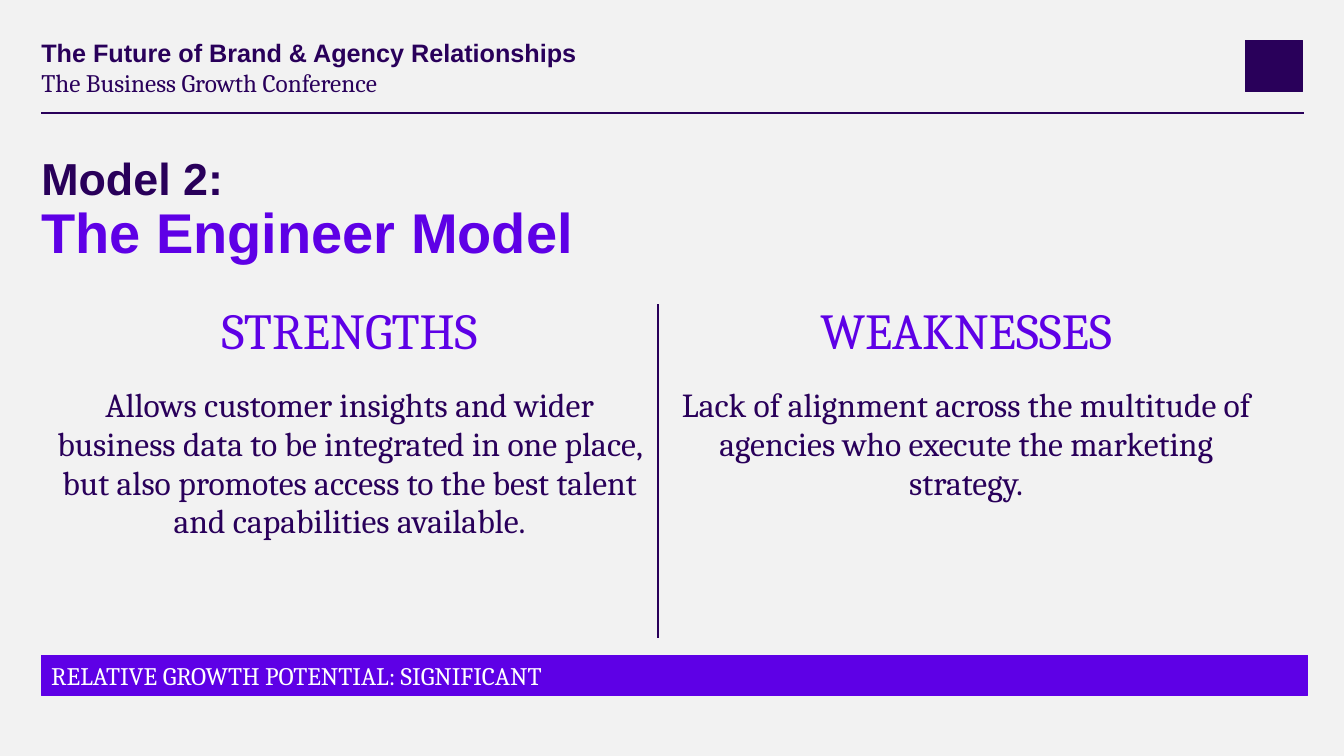
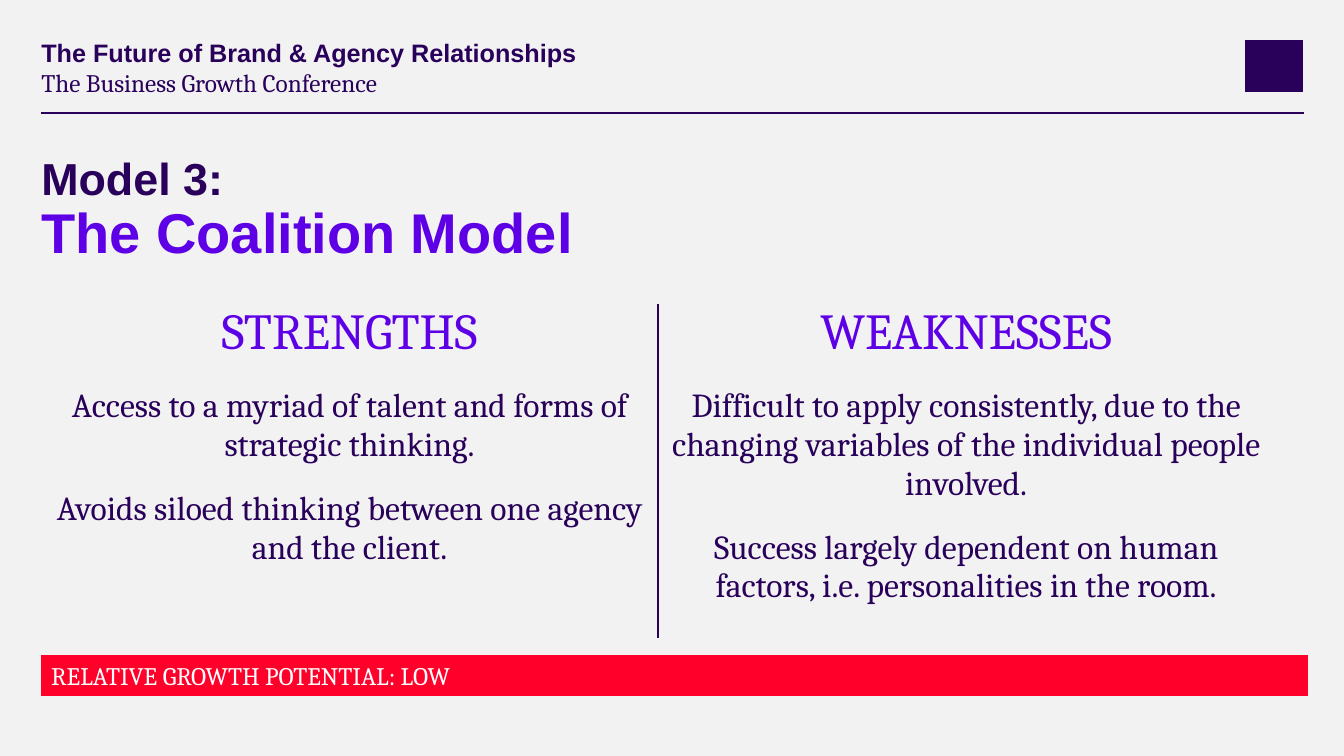
from dataclasses import dataclass

from lxml.etree import SubElement
from pptx import Presentation
from pptx.dml.color import RGBColor
from pptx.enum.shapes import MSO_CONNECTOR, MSO_SHAPE
from pptx.enum.text import MSO_ANCHOR, MSO_AUTO_SIZE, PP_ALIGN
from pptx.oxml.ns import qn
from pptx.util import Inches, Pt

BACKGROUND = "F2F2F2"
INK = "29005A"
VIOLET = "5E00E6"
RED = "FF002A"
WHITE = "FFFFFF"
SANS = "Arial"
SERIF = "Cambria"
LEFT = 0.41
RIGHT = 12.93
NO_TABLE_STYLE = "{2D5ABB26-0587-4C30-8999-92F81FD0307C}"


@dataclass
class Model:
    number: int
    name: str
    strengths: list[str]
    weaknesses: list[str]
    potential: str
    potential_color: str


MODELS = [
    Model(
        2,
        "The Engineer Model",
        ["Allows customer insights and wider business data to be integrated in one place, "
         "but also promotes access to the best talent and capabilities available."],
        ["Lack of alignment across the multitude of agencies who execute the marketing strategy."],
        "SIGNIFICANT",
        VIOLET,
    ),
    Model(
        3,
        "The Coalition Model",
        ["Access to a myriad of talent and forms of strategic thinking.",
         "Avoids siloed thinking between one agency and the client."],
        ["Difficult to apply consistently, due to the changing variables of the individual "
         "people involved.",
         "Success largely dependent on human factors, i.e. personalities in the room."],
        "LOW",
        RED,
    ),
]


def rgb(color: str) -> RGBColor:
    return RGBColor.from_string(color)


def add_text(paragraph, text: str, *, size: float, color: str = INK, font: str = SERIF,
             bold: bool = False, align=PP_ALIGN.LEFT, line_spacing: float = 1.0,
             space_after: float = 0) -> None:
    """Append a run and set the format of its paragraph."""
    paragraph.alignment = align
    paragraph.line_spacing = line_spacing
    paragraph.space_before = Pt(0)
    paragraph.space_after = Pt(space_after)
    run = paragraph.add_run()
    run.text = text
    run.font.size = Pt(size)
    run.font.name = font
    run.font.bold = bold
    run.font.color.rgb = rgb(color)


def prepare_placeholder(placeholder, top: float, width: float, height: float):
    """Place a placeholder, clear its insets and return its first paragraph."""
    placeholder.left, placeholder.top = Inches(LEFT), Inches(top)
    placeholder.width, placeholder.height = Inches(width), Inches(height)
    frame = placeholder.text_frame
    frame.margin_left = frame.margin_right = frame.margin_top = frame.margin_bottom = 0
    frame.auto_size = MSO_AUTO_SIZE.NONE
    frame.word_wrap = True
    frame.vertical_anchor = MSO_ANCHOR.MIDDLE
    return frame.paragraphs[0]


def remove_bullet(paragraph) -> None:
    properties = paragraph._p.get_or_add_pPr()
    properties.set("marL", "0")
    properties.set("indent", "0")
    SubElement(properties, qn("a:buNone"))


def add_rectangle(slide, left: float, top: float, width: float, height: float, color: str):
    shape = slide.shapes.add_shape(
        MSO_SHAPE.RECTANGLE, Inches(left), Inches(top), Inches(width), Inches(height))
    shape.shadow.inherit = False
    shape.fill.solid()
    shape.fill.fore_color.rgb = rgb(color)
    shape.line.color.rgb = rgb(color)
    shape.line.width = Pt(0.75)
    return shape


def add_header(slide) -> None:
    rule = slide.shapes.add_connector(
        MSO_CONNECTOR.STRAIGHT, Inches(LEFT), Inches(1.12), Inches(RIGHT), Inches(1.12))
    rule.line.color.rgb = rgb(INK)
    rule.line.width = Pt(1.5)
    SubElement(rule._element.spPr, qn("a:effectLst"))
    add_rectangle(slide, 12.35, 0.4, 0.57, 0.51, INK)

    lines = [
        ("The Future of Brand & Agency Relationships", SANS, True),
        ("The Business Growth Conference", SERIF, False),
    ]
    for index, (text, font, bold) in enumerate(lines):
        placeholder = slide.placeholders[index + 1]
        paragraph = prepare_placeholder(placeholder, 0.4 + 0.3 * index, 8.27, 0.27)
        add_text(paragraph, text, size=18, font=font, bold=bold, line_spacing=0.9)
        remove_bullet(paragraph)


def add_title(slide, model: Model) -> None:
    paragraph = prepare_placeholder(slide.shapes.title, 1.55, RIGHT - LEFT, 1.09)
    title_format = dict(font=SANS, bold=True, line_spacing=0.9)
    add_text(paragraph, f"Model {model.number}:", size=32, **title_format)
    paragraph.add_line_break()
    add_text(paragraph, model.name, size=40, color=VIOLET, **title_format)


def add_cell_border(cell, side: str) -> None:
    """Draw one side of a cell; side is lnL, lnR, lnT or lnB."""
    properties = cell._tc.get_or_add_tcPr()
    border = SubElement(properties, qn(f"a:{side}"), w=str(Pt(1.5)))
    fill = SubElement(border, qn("a:solidFill"))
    SubElement(fill, qn("a:srgbClr"), val=INK)
    properties.insert(0, border)


def add_comparison(slide, model: Model) -> None:
    frame = slide.shapes.add_table(
        1, 2, Inches(LEFT), Inches(3.02), Inches(12.23), Inches(3.31))
    table = frame.table
    table.first_row = table.horz_banding = False
    table._tbl.tblPr.find(qn("a:tableStyleId")).text = NO_TABLE_STYLE

    columns = [
        ("STRENGTHS", model.strengths, "lnR"),
        ("WEAKNESSES", model.weaknesses, "lnL"),
    ]
    for index, (heading, points, border_side) in enumerate(columns):
        cell = table.cell(0, index)
        cell.margin_left = cell.margin_right = Inches(0.1)
        cell.margin_top = cell.margin_bottom = 0
        cell.vertical_anchor = MSO_ANCHOR.TOP
        cell.fill.background()
        add_cell_border(cell, border_side)
        cell_format = dict(align=PP_ALIGN.CENTER, space_after=18)
        text_frame = cell.text_frame
        add_text(text_frame.paragraphs[0], heading, size=36, color=VIOLET, **cell_format)
        for point in points:
            add_text(text_frame.add_paragraph(), point, size=24, **cell_format)


def add_potential_band(slide, model: Model) -> None:
    band = add_rectangle(slide, LEFT, 6.5, 12.56, 0.4, model.potential_color)
    band.text_frame.word_wrap = True
    band.text_frame.vertical_anchor = MSO_ANCHOR.MIDDLE
    add_text(band.text_frame.paragraphs[0], f"RELATIVE GROWTH POTENTIAL: {model.potential}",
             size=18, color=WHITE)


def main() -> None:
    presentation = Presentation()
    presentation.slide_width = Inches(13.33)
    presentation.slide_height = Inches(7.5)
    background = presentation.slide_master.background.fill
    background.solid()
    background.fore_color.rgb = rgb(BACKGROUND)
    layout = presentation.slide_layouts.get_by_name("Two Content")

    for model in MODELS:
        slide = presentation.slides.add_slide(layout)
        add_header(slide)
        add_title(slide, model)
        add_comparison(slide, model)
        add_potential_band(slide, model)

    presentation.save("out.pptx")


if __name__ == "__main__":
    main()
